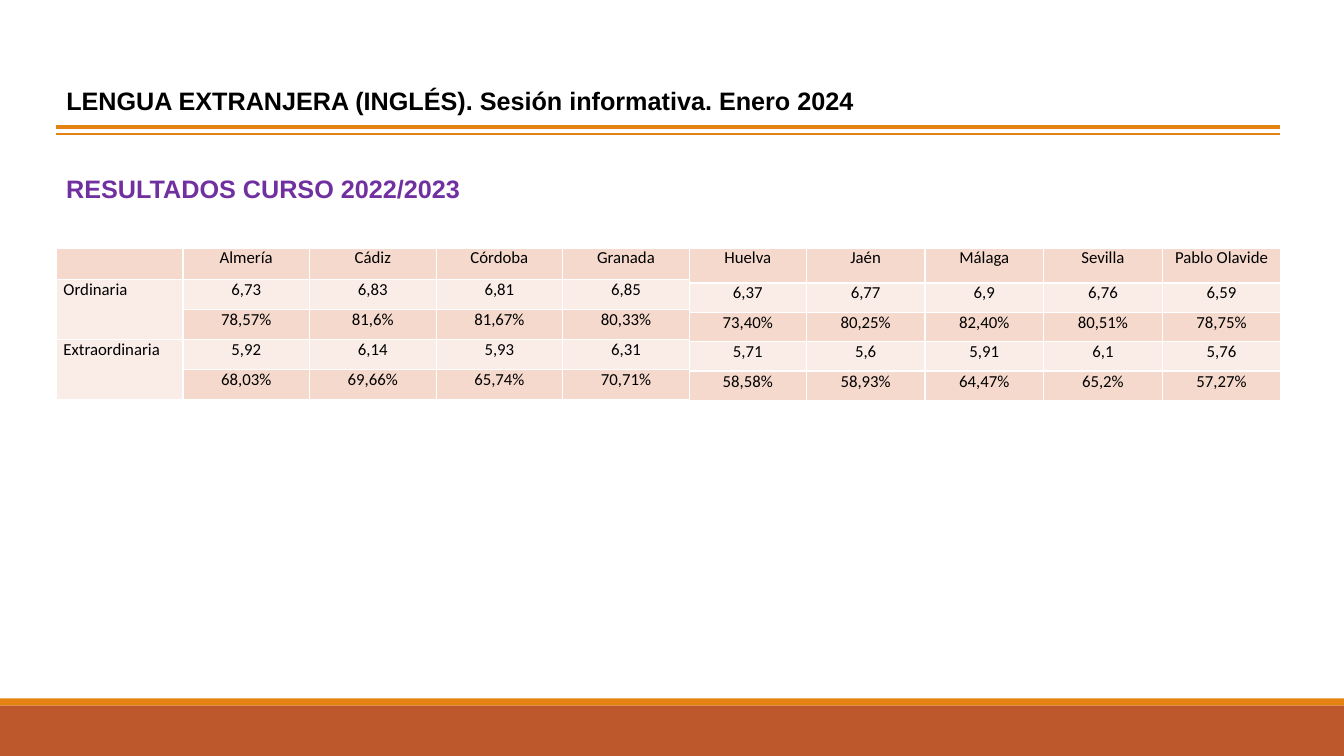
from lxml.etree import SubElement
from pptx import Presentation
from pptx.dml.color import RGBColor
from pptx.enum.shapes import MSO_CONNECTOR as Connector, MSO_SHAPE as Preset
from pptx.enum.text import MSO_ANCHOR as Anchor, MSO_AUTO_SIZE as AutoSize, PP_ALIGN as Align
from pptx.oxml import parse_xml
from pptx.oxml.ns import nsdecls, qn
from pptx.util import Cm, Pt

ORANGE, RUST, WHITE, BLACK, PURPLE = "E48312", "BD582C", "FFFFFF", "000000", "7030A0"
ROW_FILLS = ("F5D9CC", "FAEDE7")
HEADING = {"name": "Arial", "size": Pt(18), "bold": True}
CELL_FONT = {"name": "Calibri", "size": Pt(12), "bold": False}
CELL_FORMAT = {"margin_left": Cm(0.18), "margin_right": Cm(0.18),
               "margin_top": 0, "margin_bottom": 0, "vertical_anchor": Anchor.TOP}
FRAME_FORMAT = {"word_wrap": True, "auto_size": AutoSize.NONE, "vertical_anchor": Anchor.TOP,
                "margin_left": Cm(0.25), "margin_right": Cm(0.25),
                "margin_top": Cm(0.13), "margin_bottom": Cm(0.13)}

SLIDE_WIDTH, SLIDE_HEIGHT = 33.87, 19.05
LEFT, CONTENT_WIDTH = 1.42, 30.84
TABLE_TOP = 6.25

FIRST_ROWS = [
    ["", "Almería", "Cádiz", "Córdoba", "Granada"],
    ["Ordinaria", "6,73", "6,83", "6,81", "6,85"],
    ["", "78,57%", "81,6%", "81,67%", "80,33%"],
    ["Extraordinaria", "5,92", "6,14", "5,93", "6,31"],
    ["", "68,03%", "69,66%", "65,74%", "70,71%"],
]
SECOND_ROWS = [
    ["Huelva", "Jaén", "Málaga", "Sevilla", "Pablo Olavide"],
    ["6,37", "6,77", "6,9", "6,76", "6,59"],
    ["73,40%", "80,25%", "82,40%", "80,51%", "78,75%"],
    ["5,71", "5,6", "5,91", "6,1", "5,76"],
    ["58,58%", "58,93%", "64,47%", "65,2%", "57,27%"],
]


def color(value):
    return RGBColor.from_string(value)


def apply_format(target, values):
    for name, value in values.items():
        setattr(target, name, value)


def write_text(frame, text, font, text_color, paragraph_format):
    paragraph = frame.paragraphs[0]
    apply_format(paragraph, paragraph_format)
    run = paragraph.add_run()
    run.text = text
    apply_format(run.font, font)
    run.font.color.rgb = color(text_color)


def add_footer_bands(slide, left, top, width, height):
    stripe_height = 0.18
    bands = ((top, stripe_height, ORANGE), (top + stripe_height, height - stripe_height, RUST))
    for band_top, band_height, fill in bands:
        shape = slide.shapes.add_shape(
            Preset.RECTANGLE, Cm(left), Cm(band_top), Cm(width), Cm(band_height))
        shape.shadow.inherit = False
        shape.fill.solid()
        shape.fill.fore_color.rgb = color(fill)
        shape.line.fill.background()


def add_header(slide, left, top, width, height):
    title = slide.shapes.title
    apply_format(title, {"left": Cm(left), "top": Cm(top),
                         "width": Cm(width), "height": Cm(height)})
    apply_format(title.text_frame, FRAME_FORMAT)
    write_text(title.text_frame, "LENGUA EXTRANJERA (INGLÉS). Sesión informativa. Enero 2024",
               HEADING, BLACK, {"alignment": Align.LEFT, "line_spacing": 1.2, "space_before": Pt(0)})
    for offset, weight in ((1.5, 1), (1.32, 2.25)):
        rule_top = Cm(top + offset)
        rule = slide.shapes.add_connector(
            Connector.STRAIGHT, Cm(left), rule_top, Cm(left + width), rule_top)
        rule.line.color.rgb = color(ORANGE)
        rule.line.width = Pt(weight)
        SubElement(rule._element.spPr, qn("a:effectLst"))


def add_subtitle(slide, left, top, width, height):
    subtitle = slide.shapes.add_textbox(Cm(left), Cm(top), Cm(width), Cm(height))
    apply_format(subtitle.text_frame, FRAME_FORMAT)
    write_text(subtitle.text_frame, "RESULTADOS CURSO 2022/2023", HEADING, PURPLE,
               {"alignment": Align.LEFT, "space_after": Pt(6)})


def add_cell_borders(cell):
    properties = cell._tc.get_or_add_tcPr()
    for side in "LRTB":
        properties.append(parse_xml(
            f'<a:ln{side} {nsdecls("a")} w="12700"><a:solidFill>'
            f'<a:srgbClr val="{WHITE}"/></a:solidFill></a:ln{side}>'))


def add_results_table(slide, left, top, rows, column_widths, row_heights, has_labels=False):
    table = slide.shapes.add_table(
        len(rows), len(column_widths), Cm(left), Cm(top),
        Cm(sum(column_widths)), Cm(sum(row_heights))).table
    for column, width in zip(table.columns, column_widths):
        column.width = Cm(width)
    for row, height in zip(table.rows, row_heights):
        row.height = Cm(height)
    for row_index, values in enumerate(rows):
        for column_index, value in enumerate(values):
            cell = table.cell(row_index, column_index)
            apply_format(cell, CELL_FORMAT)
            add_cell_borders(cell)
            cell.fill.solid()
            cell.fill.fore_color.rgb = color(ROW_FILLS[row_index % 2])
            is_label = has_labels and column_index == 0
            write_text(cell.text_frame, value, CELL_FONT, BLACK,
                       {"alignment": Align.LEFT if is_label else Align.CENTER})
    if has_labels:
        for row_index in (1, 3):
            table.cell(row_index, 0).merge(table.cell(row_index + 1, 0))


def main():
    presentation = Presentation()
    presentation.slide_width, presentation.slide_height = Cm(SLIDE_WIDTH), Cm(SLIDE_HEIGHT)
    slide = presentation.slides.add_slide(presentation.slide_layouts[5])
    add_footer_bands(slide, 0, 17.6, SLIDE_WIDTH, SLIDE_HEIGHT - 17.6)
    add_header(slide, LEFT, 1.88, CONTENT_WIDTH, 1.17)
    add_subtitle(slide, LEFT, 4.24, 16.92, 1.02)
    first_widths = [3.19] * 5
    add_results_table(slide, LEFT, TABLE_TOP, FIRST_ROWS, first_widths,
                      [0.79] + [0.76] * 4, has_labels=True)
    add_results_table(slide, LEFT + sum(first_widths), TABLE_TOP, SECOND_ROWS,
                      [2.95] + [2.99] * 4, [0.88] + [0.74] * 4)
    presentation.save("out.pptx")


if __name__ == "__main__":
    main()
